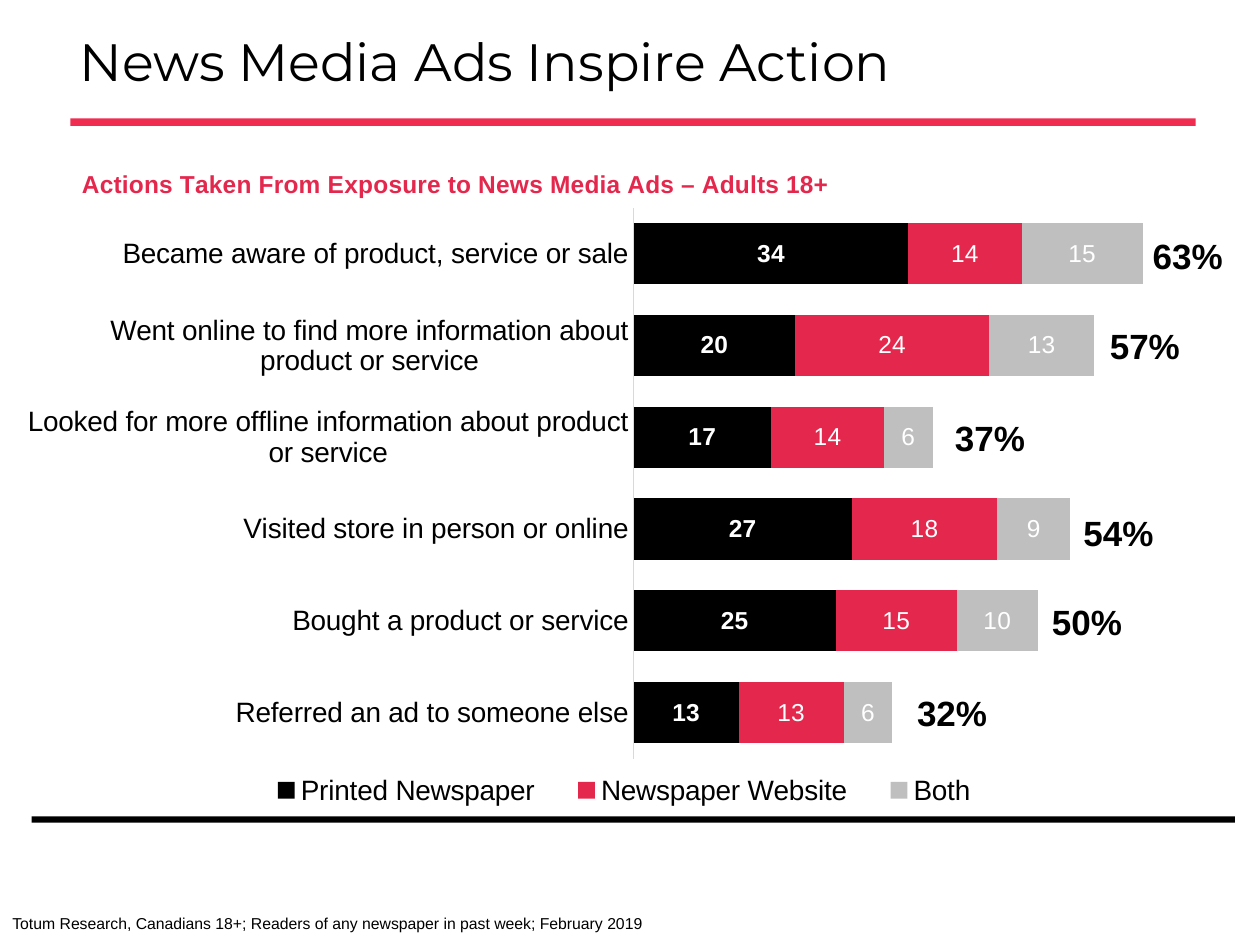
from dataclasses import dataclass

from lxml.etree import SubElement
from pptx import Presentation
from pptx.chart.data import CategoryChartData
from pptx.dml.color import RGBColor
from pptx.enum.chart import XL_CHART_TYPE, XL_LEGEND_POSITION, XL_TICK_MARK
from pptx.enum.shapes import MSO_SHAPE
from pptx.enum.text import MSO_ANCHOR, MSO_AUTO_SIZE, PP_ALIGN
from pptx.oxml.ns import qn
from pptx.util import Inches, Pt


@dataclass(frozen=True)
class Theme:
    black: str = "000000"
    white: str = "FFFFFF"
    red: str = "E4284D"
    rule: str = "F02C51"
    gray: str = "BFBFBF"
    axis: str = "D9D9D9"
    head: str = "Montserrat"
    body: str = "Arial"
    title: int = 30
    total: int = 20
    label: int = 16
    value: int = 14
    base: int = 10
    note: int = 9


# Chart rows run from the bottom bar to the top bar
ROWS = [
    ("Referred an ad to someone else", (13, 13, 6)),
    ("Bought a product or service", (25, 15, 10)),
    ("Visited store in person or online", (27, 18, 9)),
    ("Looked for more offline information about product or service", (17, 14, 6)),
    ("Went online to find more information about product or service", (20, 24, 13)),
    ("Became aware of product, service or sale", (34, 14, 15)),
]
# Left and top of each total, in the order of the rows
SPOTS = [(7.18, 5.44), (8.25, 4.72), (8.5, 4.01), (7.48, 3.26), (8.71, 2.53), (9.05, 1.81)]


def place(part, index, inner=False, **box):
    """Give a chart part a fixed layout, in fractions of the chart."""
    for old in part.findall(qn("c:layout")):
        part.remove(old)
    layout = SubElement(part, qn("c:layout"))
    part.insert(index, layout)
    manual = SubElement(layout, qn("c:manualLayout"))
    if inner:
        SubElement(manual, qn("c:layoutTarget")).set("val", "inner")
    for key in "xy":
        SubElement(manual, qn(f"c:{key}Mode")).set("val", "edge")
    for key, val in box.items():
        SubElement(manual, qn(f"c:{key}")).set("val", str(val))


class Deck:
    def __init__(self, theme):
        self.theme = theme
        self.prs = Presentation()
        self.prs.slide_width, self.prs.slide_height = Inches(10), Inches(7.5)
        self.slide = self.prs.slides.add_slide(self.prs.slide_layouts[5])

    def style(self, font, size, color=None, bold=False, face=None):
        font.name = face or self.theme.body
        font.size = Pt(size)
        font.bold = bold
        font.color.rgb = RGBColor.from_string(color or self.theme.black)

    def title(self, text, *box):
        shape = self.slide.shapes.title
        shape.left, shape.top, shape.width, shape.height = map(Inches, box)
        frame = shape.text_frame
        frame.text = text
        frame.vertical_anchor = MSO_ANCHOR.MIDDLE
        frame.margin_left = frame.margin_right = Inches(0.07)
        frame.margin_top = frame.margin_bottom = Inches(0.04)
        para = frame.paragraphs[0]
        para.alignment = PP_ALIGN.LEFT
        para.line_spacing = 0.9
        self.style(para.runs[0].font, self.theme.title, face=self.theme.head)

    def bar(self, color, *box):
        shape = self.slide.shapes.add_shape(MSO_SHAPE.RECTANGLE, *map(Inches, box))
        shape.shadow.inherit = False
        shape.fill.solid()
        shape.fill.fore_color.rgb = RGBColor.from_string(color)
        shape.line.fill.background()

    def text(self, text, size, *box, bold=False):
        frame = self.slide.shapes.add_textbox(*map(Inches, box)).text_frame
        frame.text = text
        frame.word_wrap = False
        frame.auto_size = MSO_AUTO_SIZE.SHAPE_TO_FIT_TEXT
        self.style(frame.paragraphs[0].runs[0].font, size, bold=bold)

    def chart(self, title, names, rows, *box):
        theme = self.theme
        data = CategoryChartData()
        data.categories = [name for name, _ in rows]
        for name, vals in zip(names, zip(*(vals for _, vals in rows))):
            data.add_series(name, vals)
        chart = self.slide.shapes.add_chart(
            XL_CHART_TYPE.BAR_STACKED, *map(Inches, box), data).chart
        self.style(chart.font, theme.base)

        # Title
        head = chart.chart_title
        head.text_frame.text = title
        run = head.text_frame.paragraphs[0].runs[0]
        self.style(run.font, theme.value, theme.red, bold=True)
        place(head._element, 1, x=0.04, y=0.03)

        # Axes
        cat, val = chart.category_axis, chart.value_axis
        cat.major_tick_mark = cat.minor_tick_mark = XL_TICK_MARK.NONE
        cat.format.line.color.rgb = RGBColor.from_string(theme.axis)
        cat.format.line.width = Pt(0.75)
        self.style(cat.tick_labels.font, theme.label)
        val.minimum_scale, val.maximum_scale = 0, 70
        val.has_major_gridlines = False
        val.visible = False

        # Legend
        chart.has_legend = True
        chart.legend.position = XL_LEGEND_POSITION.BOTTOM
        chart.legend.include_in_layout = False
        self.style(chart.legend.font, theme.label)
        place(chart.legend._element, 1, x=0.18, y=0.9, w=0.64, h=0.08)

        # Bars and their values
        plot = chart.plots[0]
        plot.gap_width, plot.overlap = 50, 100
        plot.vary_by_categories = False
        for series, color in zip(plot.series, (theme.black, theme.red, theme.gray)):
            series.format.fill.solid()
            series.format.fill.fore_color.rgb = RGBColor.from_string(color)
            labels = series.data_labels
            labels.show_value = True
            self.style(labels.font, theme.value, theme.white, bold=color == theme.black)
        area = chart._chartSpace.chart.plotArea
        place(area, 0, inner=True, x=0.508, y=0.093, w=0.476, h=0.801)


def main():
    theme = Theme()
    deck = Deck(theme)

    # Rules and title
    deck.bar(theme.black, 0.25, 6.48, 9.55, 0.05)
    deck.bar(theme.rule, 0.56, 0.94, 8.93, 0.06)
    deck.title("News Media Ads Inspire Action", 0.56, -0.21, 8.62, 1.45)

    # Chart
    deck.chart("Actions Taken From Exposure to News Media Ads – Adults 18+",
               ("Printed Newspaper", "Newspaper Website", "Both"), ROWS,
               0.22, 1.14, 9.45, 5.46)

    # Source note
    deck.text("Totum Research, Canadians 18+; Readers of any newspaper in past week; "
              "February 2019", theme.note, 0, 7.2, 5.27, 0.25)

    # Row totals, top bar first
    for (_, vals), (left, top) in reversed(list(zip(ROWS, SPOTS))):
        deck.text(f"{sum(vals)}%", theme.total, left, top, 0.76, 0.44, bold=True)

    deck.prs.save("out.pptx")


if __name__ == "__main__":
    main()
